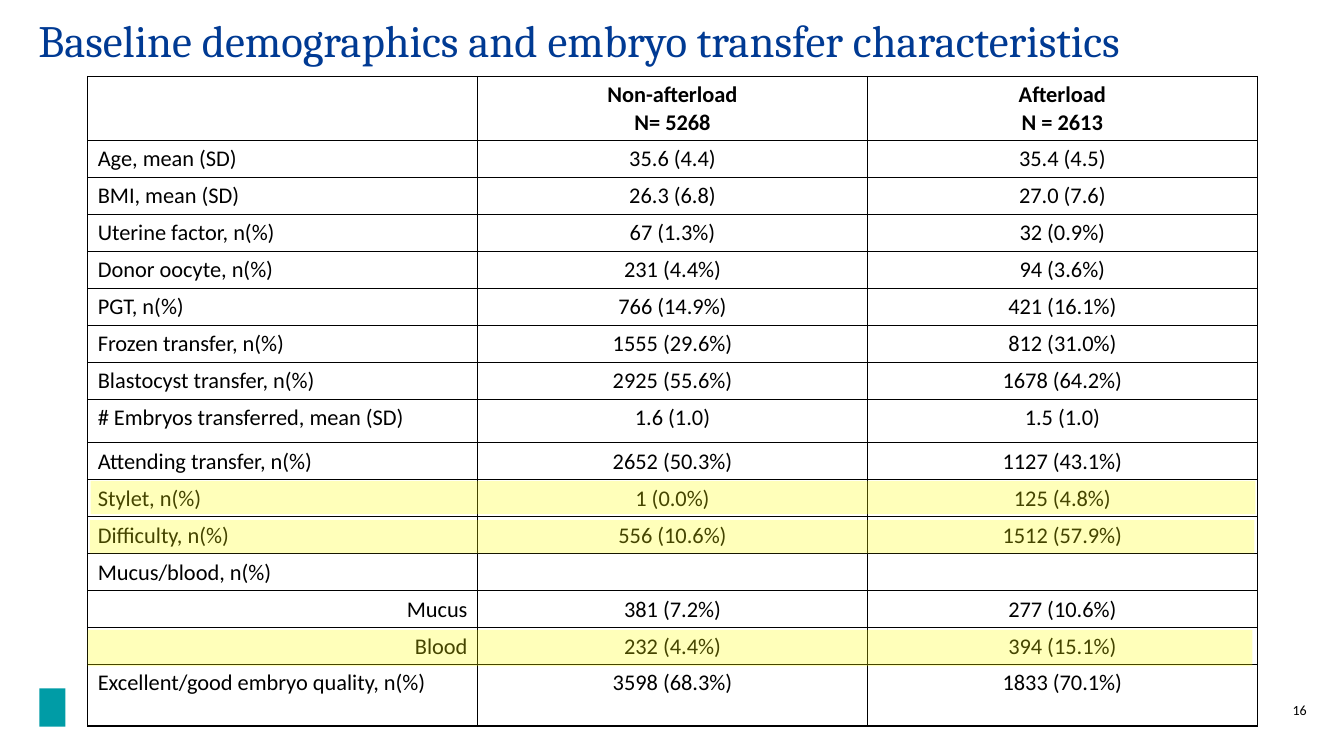
from lxml import etree
from pptx import Presentation
from pptx.dml.color import RGBColor
from pptx.enum.shapes import MSO_SHAPE
from pptx.enum.text import MSO_ANCHOR, PP_ALIGN
from pptx.oxml.ns import qn
from pptx.util import Inches, Pt

COLORS = {
    "title": "003A93",
    "text": "000000",
    "border": "000000",
    "highlight": "FFFF00",
    "emblem": "009CA6",
}
HEADER = ("", "Non-afterload\nN= 5268", "Afterload\nN = 2613")
ROWS = [
    ("Age, mean (SD)", "35.6 (4.4)", "35.4 (4.5)"),
    ("BMI, mean (SD)", "26.3 (6.8)", "27.0 (7.6)"),
    ("Uterine factor, n(%)", "67 (1.3%)", "32 (0.9%)"),
    ("Donor oocyte, n(%)", "231 (4.4%)", "94 (3.6%)"),
    ("PGT, n(%)", "766 (14.9%)", "421 (16.1%)"),
    ("Frozen transfer, n(%)", "1555 (29.6%)", "812 (31.0%)"),
    ("Blastocyst transfer, n(%)", "2925 (55.6%)", "1678 (64.2%)"),
    ("# Embryos transferred, mean (SD)", "1.6 (1.0)", "1.5 (1.0)"),
    ("Attending transfer, n(%)", "2652 (50.3%)", "1127 (43.1%)"),
    ("Stylet, n(%)", "1 (0.0%)", "125 (4.8%)"),
    ("Difficulty, n(%)", "556 (10.6%)", "1512 (57.9%)"),
    ("Mucus/blood, n(%)", "", ""),
    ("Mucus", "381 (7.2%)", "277 (10.6%)"),
    ("Blood", "232 (4.4%)", "394 (15.1%)"),
    ("Excellent/good embryo quality, n(%)", "3598 (68.3%)", "1833 (70.1%)"),
]
SUBROWS = ("Mucus", "Blood")
ROW_HEIGHT = 0.36
SPECIAL_HEIGHTS = {0: 0.62, 8: 0.43, 15: 0.61}
HIGHLIGHTS = [(0.9, 4.77, 0.33), (0.89, 5.16, 0.33), (0.87, 6.25, 0.36)]


def add_run(p, text, size, color, font="Calibri", bold=False):
    r = p.add_run()
    r.text = text
    r.font.name = font
    r.font.size = Pt(size)
    r.font.bold = bold
    r.font.color.rgb = RGBColor.from_string(COLORS[color])


def clear_margins(tf):
    tf.margin_left = tf.margin_top = tf.margin_right = tf.margin_bottom = 0


def set_title(s, text):
    title = s.shapes.title
    title.left, title.top = Inches(0.38), Inches(0.19)
    title.width, title.height = Inches(12.38), Inches(0.48)
    tf = title.text_frame
    clear_margins(tf)
    tf.word_wrap = True
    tf.vertical_anchor = MSO_ANCHOR.MIDDLE
    p = tf.paragraphs[0]
    p.alignment = PP_ALIGN.LEFT
    p.line_spacing = 0.9
    add_run(p, text, 32, "title", font="Cambria")


def set_borders(cell):
    tc_pr = cell._tc.get_or_add_tcPr()
    for i, side in enumerate(("lnL", "lnR", "lnT", "lnB")):
        ln = etree.Element(qn(f"a:{side}"), w=str(Pt(1)))
        fill = etree.SubElement(ln, qn("a:solidFill"))
        etree.SubElement(fill, qn("a:srgbClr"), val=COLORS["border"])
        tc_pr.insert(i, ln)


def fill_cell(cell, text, alignment, bold):
    cell.fill.background()
    set_borders(cell)
    tf = cell.text_frame
    for i, line in enumerate(text.split("\n")):
        p = tf.add_paragraph() if i else tf.paragraphs[0]
        p.alignment = alignment
        if line:
            add_run(p, line, 16, "text", bold=bold)
        else:
            etree.SubElement(p._p, qn("a:endParaRPr"), sz="1600")


def column_alignment(col, label):
    if col:
        return PP_ALIGN.CENTER
    return PP_ALIGN.RIGHT if label in SUBROWS else PP_ALIGN.LEFT


def add_demographics_table(s):
    rows = [HEADER, *ROWS]
    table = s.shapes.add_table(len(rows), len(HEADER), Inches(0.87), Inches(0.76),
                               Inches(11.6), Inches(6.44)).table
    table.first_row = table.horz_banding = False
    for column in table.columns:
        column.width = Inches(11.6 / len(HEADER))
    for i, values in enumerate(rows):
        table.rows[i].height = Inches(SPECIAL_HEIGHTS.get(i, ROW_HEIGHT))
        for j, text in enumerate(values):
            fill_cell(table.cell(i, j), text, column_alignment(j, values[0]), bold=i == 0)


def add_block(s, preset, left, top, width, height, color):
    sp = s.shapes.add_shape(preset, Inches(left), Inches(top), Inches(width), Inches(height))
    sp.shadow.inherit = False
    sp.fill.solid()
    sp.fill.fore_color.rgb = RGBColor.from_string(COLORS[color])
    sp.line.fill.background()
    return sp


def add_highlight(s, left, top, height):
    sp = add_block(s, MSO_SHAPE.FLOWCHART_PROCESS, left, top, 11.55, height, "highlight")
    color = sp._element.spPr.find(qn("a:solidFill")).find(qn("a:srgbClr"))
    etree.SubElement(color, qn("a:alpha"), val="27000")


def add_slide_number(s, number):
    box = s.shapes.add_textbox(Inches(12.58), Inches(6.96), Inches(0.38), Inches(0.17))
    tf = box.text_frame
    clear_margins(tf)
    tf.word_wrap = True
    p = tf.paragraphs[0]
    p.alignment = PP_ALIGN.RIGHT
    add_run(p, number, 10, "text")


def main():
    prs = Presentation()
    prs.slide_width, prs.slide_height = Inches(13.33), Inches(7.5)
    s = prs.slides.add_slide(prs.slide_layouts[5])
    add_slide_number(s, "16")
    add_block(s, MSO_SHAPE.RECTANGLE, 0.39, 6.83, 0.26, 0.38, "emblem")
    set_title(s, "Baseline demographics and embryo transfer characteristics")
    add_demographics_table(s)
    for left, top, height in HIGHLIGHTS:
        add_highlight(s, left, top, height)
    prs.save("out.pptx")


if __name__ == "__main__":
    main()
